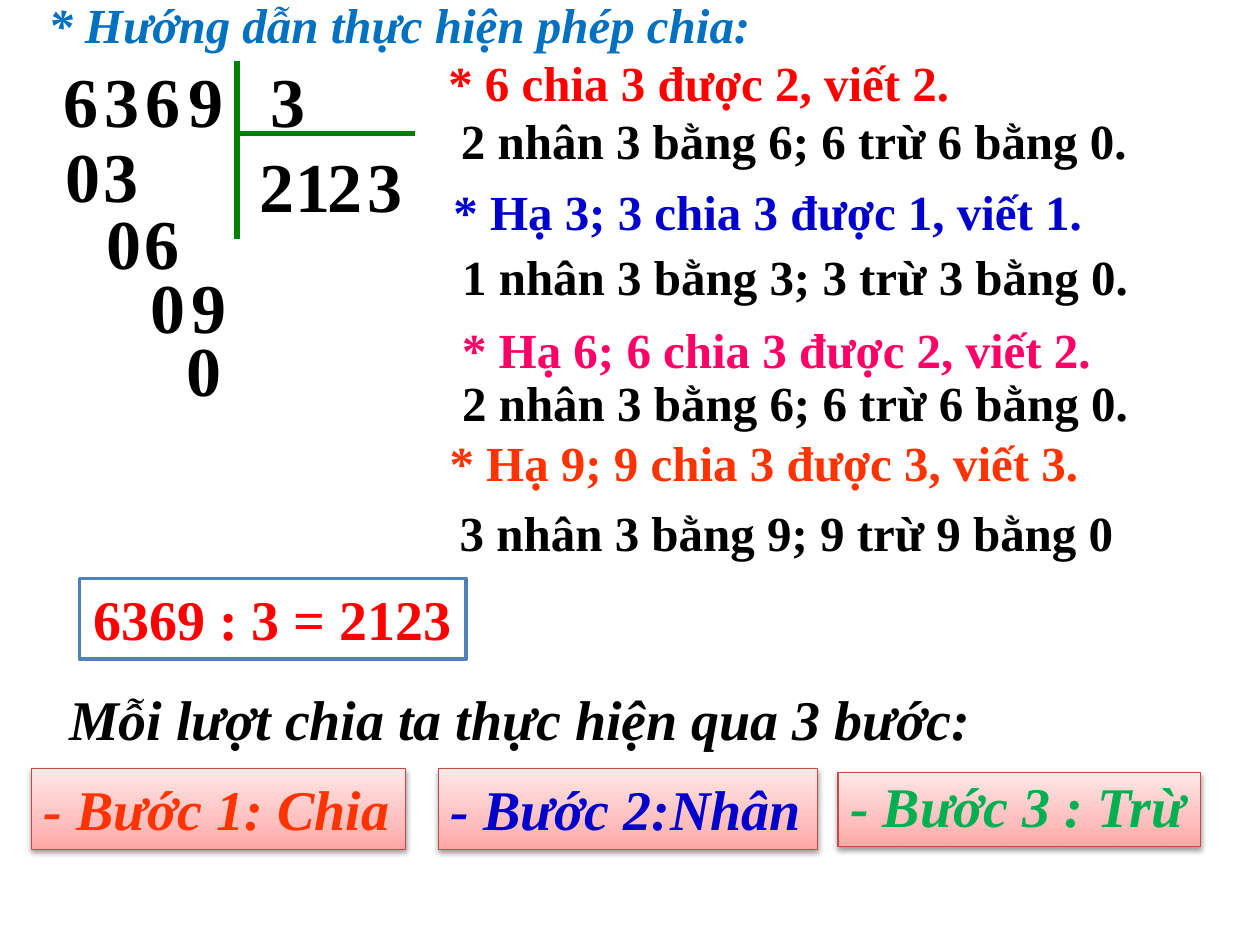
"""Build a slide that explains the long division 6369 : 3."""
from dataclasses import dataclass

import lxml.etree
import pptx
import pptx.dml.color
import pptx.enum.shapes
import pptx.enum.text
import pptx.oxml
import pptx.oxml.ns
import pptx.util

Pt = pptx.util.Pt
Align = pptx.enum.text.PP_ALIGN
FONT = "Times New Roman"
BLACK = "000000"
GREEN = "008000"
DIGIT_HEIGHT = 55.4
LINE_HEIGHT = 41


@dataclass(frozen=True)
class Frame:
    """Position and size in points."""
    left: float
    top: float
    width: float
    height: float

    def lengths(self) -> tuple:
        """Return the four values as lengths."""
        return tuple(Pt(value) for value in (self.left, self.top, self.width, self.height))


@dataclass(frozen=True)
class Style:
    """Look of one line of text."""
    size: float
    color: str = BLACK
    italic: bool = False
    align: Align = Align.LEFT
    wrap: bool = True
    spacing: float = 1.0


@dataclass(frozen=True)
class DigitRow:
    """Digits on one level, each with its left edge and width."""
    top: float
    digits: tuple


@dataclass(frozen=True)
class Explanation:
    """One line of the spoken working."""
    text: str
    left: float
    top: float
    width: float
    color: str = BLACK


@dataclass(frozen=True)
class Step:
    """One card that names a step."""
    text: str
    frame: Frame
    color: str
    spacing: float = 1.0


DIGIT_ROWS = (
    DigitRow(29.2, (("6", 29.5, 33.1), ("3", 52.6, 36.7), ("6", 76.3, 35.3),
                    ("9", 100.8, 36), ("3", 147.6, 95.8))),
    DigitRow(78, (("2", 141.1, 36), ("1", 162, 48.2), ("2", 180, 41.8), ("3", 203, 48.2))),
    DigitRow(72, (("0", 30.2, 36), ("3", 51.8, 41.8))),
    DigitRow(110.2, (("0", 54, 41.8), ("6", 75.6, 41.8))),
    DigitRow(146.9, (("0", 79.2, 48.2), ("9", 102.2, 36))),
    DigitRow(182.9, (("0", 99.4, 48.2),)),
)

EXPLANATIONS = (
    Explanation("* 6 chia 3 được 2, viết 2.", 249.1, 26.6, 360, "FF0000"),
    Explanation("2 nhân 3 bằng 6; 6 trừ 6 bằng 0.", 256.3, 59.8, 488.2),
    Explanation("* Hạ 3; 3 chia 3 được 1, viết 1.", 252, 100.1, 415.4, "0000CC"),
    Explanation("1 nhân 3 bằng 3; 3 trừ 3 bằng 0.", 257, 137.5, 474.5),
    Explanation("* Hạ 6; 6 chia 3 được 2, viết 2.", 257, 179.3, 473, "FF0066"),
    Explanation("2 nhân 3 bằng 6; 6 trừ 6 bằng 0.", 257, 209.5, 524.9),
    Explanation("* Hạ 9; 9 chia 3 được 3, viết 3.", 249.8, 243.4, 476.6, "FF3300"),
    Explanation("3 nhân 3 bằng 9; 9 trừ 9 bằng 0", 255.6, 283.7, 512.6),
)

STEPS = (
    Step("- Bước 1: Chia", Frame(18, 439.2, 213.8, 46.1), "FF3300"),
    Step("- Bước 2:Nhân", Frame(250.6, 439.2, 216.7, 46.1), "0000CC"),
    Step("- Bước 3 : Trừ", Frame(478.8, 441.4, 207.4, 42.5), "00B050", 0.9),
)


def rgb(color: str) -> pptx.dml.color.RGBColor:
    """Turn a hex string into a colour."""
    return pptx.dml.color.RGBColor.from_string(color)


def write(shape, text: str, style: Style) -> None:
    """Put one bold, styled line of text in a shape."""
    frame = shape.text_frame
    frame.text = text
    frame.word_wrap = style.wrap
    frame.auto_size = pptx.enum.text.MSO_AUTO_SIZE.SHAPE_TO_FIT_TEXT
    frame.vertical_anchor = pptx.enum.text.MSO_ANCHOR.TOP
    para = frame.paragraphs[0]
    para.alignment = style.align
    para.line_spacing = style.spacing
    para.space_before = Pt(0)
    para.font.name = FONT
    para.font.size = Pt(style.size)
    para.font.bold = True
    para.font.italic = style.italic
    para.font.color.rgb = rgb(style.color)


def add_text(page, text: str, frame: Frame, style: Style) -> None:
    """Add a text box."""
    write(page.shapes.add_textbox(*frame.lengths()), text, style)


def add_box(page, text: str, frame: Frame, style: Style, border: str, weight: float):
    """Add a white bordered rectangle with text."""
    box = page.shapes.add_shape(pptx.enum.shapes.MSO_SHAPE.RECTANGLE, *frame.lengths())
    box.shadow.inherit = False
    box.fill.solid()
    box.fill.fore_color.rgb = rgb("FFFFFF")
    box.line.color.rgb = rgb(border)
    box.line.width = Pt(weight)
    write(box, text, style)
    return box


def add_step(page, step: Step) -> None:
    """Add a step card with a pink gradient and a soft shadow."""
    style = Style(32, step.color, italic=True, wrap=False, spacing=step.spacing)
    box = add_box(page, step.text, step.frame, style, "BF4C48", 0.75)
    box.fill.gradient()
    box.fill.gradient_angle = 90
    namespace = pptx.oxml.ns.nsdecls("a")
    properties = box._element.spPr
    stops = properties.find(".//" + pptx.oxml.ns.qn("a:gsLst"))
    for stop in list(stops):
        stops.remove(stop)
    for position, color in ((0, "FFA6A5"), (35, "FFC0BF"), (100, "FFE7E7")):
        stops.append(pptx.oxml.parse_xml(
            f'<a:gs {namespace} pos="{position * 1000}"><a:srgbClr val="{color}"/></a:gs>'))
    properties.find(pptx.oxml.ns.qn("a:effectLst")).append(pptx.oxml.parse_xml(
        f'<a:outerShdw {namespace} blurRad="{Pt(3.1)}" dist="{Pt(1.6)}" dir="5400000" '
        'rotWithShape="0"><a:srgbClr val="000000"><a:alpha val="38000"/></a:srgbClr>'
        '</a:outerShdw>'))


def add_rule(page, start: tuple, end: tuple) -> None:
    """Add one straight line of the division bracket."""
    points = [Pt(value) for value in (*start, *end)]
    rule = page.shapes.add_connector(pptx.enum.shapes.MSO_CONNECTOR.STRAIGHT, *points)
    rule.line.color.rgb = rgb(GREEN)
    rule.line.width = Pt(3)
    lxml.etree.SubElement(rule._element.spPr, pptx.oxml.ns.qn("a:effectLst"))


def main() -> None:
    """Build and save the slide."""
    deck = pptx.Presentation()
    deck.slide_width, deck.slide_height = Pt(720), Pt(540)
    page = deck.slides.add_slide(deck.slide_layouts[5])

    title = page.shapes.title
    title.left, title.top, title.width, title.height = Frame(
        -6.5, -6.5, 469.4, LINE_HEIGHT).lengths()
    write(title, "* Hướng dẫn thực hiện phép chia:",
          Style(28, "0070C0", italic=True, align=Align.CENTER))

    add_rule(page, (135.4, 34.6), (135.4, 136.8))
    add_rule(page, (135.4, 76.3), (236.9, 76.3))
    for row in DIGIT_ROWS:
        for digit, left, width in row.digits:
            add_text(page, digit, Frame(left, row.top, width, DIGIT_HEIGHT), Style(40))
    for line in EXPLANATIONS:
        add_text(page, line.text, Frame(line.left, line.top, line.width, LINE_HEIGHT),
                 Style(28, line.color))

    add_box(page, "6369 : 3 = 2123", Frame(45.4, 330.5, 221, 46.1),
            Style(32, "FF0000", align=Align.CENTER, wrap=False), "4F81BD", 2)
    add_text(page, "Mỗi lượt chia ta thực hiện qua 3 bước:", Frame(32.4, 391.7, 542.2, 42.5),
             Style(32, italic=True, wrap=False, spacing=0.9))
    for step in STEPS:
        add_step(page, step)
    deck.save("out.pptx")


if __name__ == "__main__":
    main()
